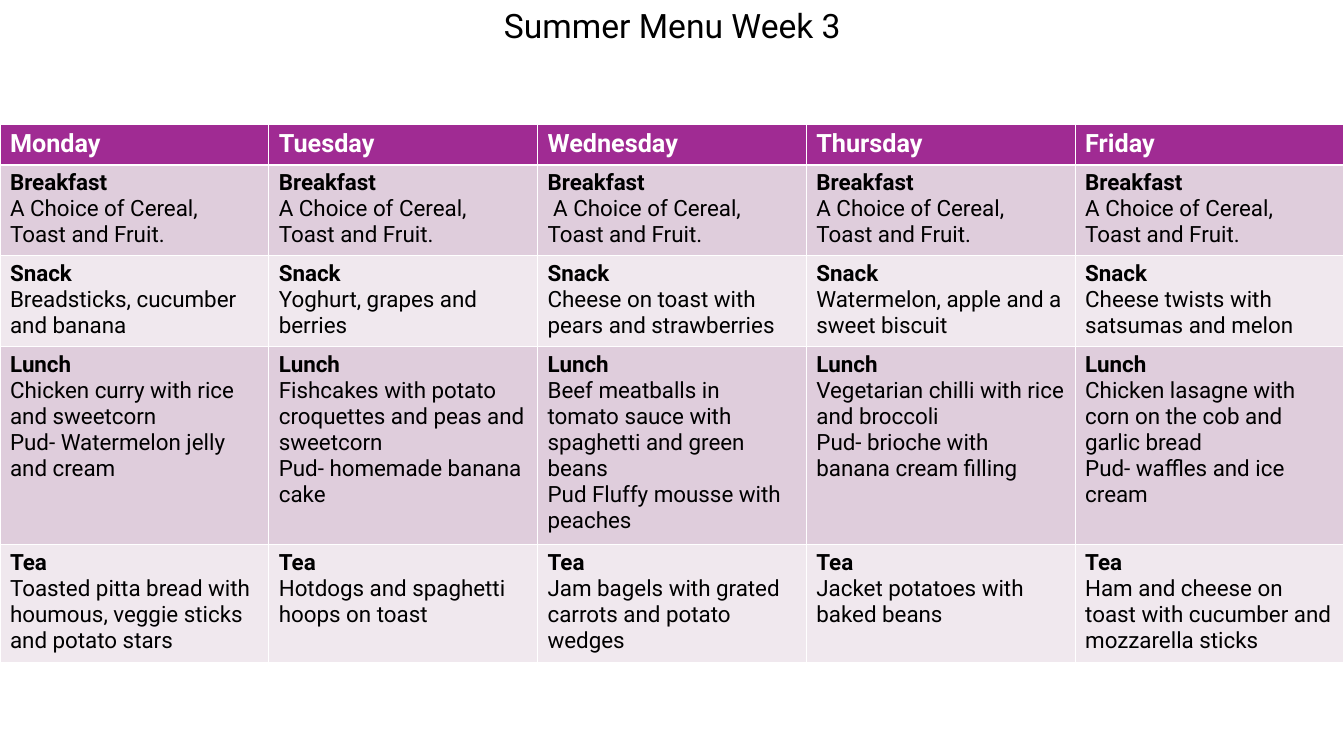
import pptx
import pptx.dml.color
import pptx.enum.text
import pptx.util

Pt = pptx.util.Pt
FONT = "Roboto"
COLOURS = {
    "header": "A02B93",
    "band_dark": "DFCDDC",
    "band_light": "F0E8EE",
    "text": "000000",
    "header_text": "FFFFFF",
}
DAYS = ["Monday", "Tuesday", "Wednesday", "Thursday", "Friday"]
CEREAL = "A Choice of Cereal, Toast and Fruit."

# Each meal: name, row height in points, and the lines for each day
MEALS = [
    ("Breakfast", 62.8, [[CEREAL], [CEREAL], [" " + CEREAL], [CEREAL], [CEREAL]]),
    ("Snack", 62.8, [
        ["Breadsticks, cucumber and banana"],
        ["Yoghurt, grapes and berries"],
        ["Cheese on toast with pears and strawberries"],
        ["Watermelon, apple and a sweet biscuit"],
        ["Cheese twists with satsumas and melon"],
    ]),
    ("Lunch", 137.6, [
        ["Chicken curry with rice and sweetcorn",
         "Pud- Watermelon jelly and cream"],
        ["Fishcakes with potato croquettes and peas and sweetcorn",
         "Pud- homemade banana cake"],
        ["Beef meatballs in tomato sauce with spaghetti and green beans",
         "Pud Fluffy mousse with peaches"],
        ["Vegetarian chilli with rice and broccoli",
         "Pud- brioche with banana cream filling"],
        ["Chicken lasagne with corn on the cob and garlic bread",
         "Pud- waffles and ice cream"],
    ]),
    ("Tea", 81.4, [
        ["Toasted pitta bread with houmous, veggie sticks and potato stars"],
        ["Hotdogs and spaghetti hoops on toast"],
        ["Jam bagels with grated carrots and potato wedges"],
        ["Jacket potatoes with baked beans"],
        ["Ham and cheese on toast with cucumber and mozzarella sticks"],
    ]),
]
HEADER_HEIGHT = 29.2


def colour(name):
    return pptx.dml.color.RGBColor.from_string(COLOURS[name])


def format_paragraph(paragraph, size, colour_name, bold=False):
    font = paragraph.font
    font.name, font.size, font.bold = FONT, Pt(size), bold
    font.color.rgb = colour(colour_name)


def fill_cell(cell, lines, fill, size, colour_name):
    """Write the lines into a cell, the first one in bold."""
    cell.fill.solid()
    cell.fill.fore_color.rgb = colour(fill)
    cell.text = "\n".join(lines)
    for index, paragraph in enumerate(cell.text_frame.paragraphs):
        format_paragraph(paragraph, size, colour_name, bold=index == 0)


def add_title(slide, text, left, top, width, height):
    title = slide.shapes.title
    title.left, title.top = Pt(left), Pt(top)
    title.width, title.height = Pt(width), Pt(height)
    frame = title.text_frame
    frame.text = text
    frame.word_wrap = True
    frame.auto_size = pptx.enum.text.MSO_AUTO_SIZE.SHAPE_TO_FIT_TEXT
    frame.vertical_anchor = pptx.enum.text.MSO_ANCHOR.TOP
    paragraph = frame.paragraphs[0]
    paragraph.alignment = pptx.enum.text.PP_ALIGN.LEFT
    format_paragraph(paragraph, 24, "text")


def add_menu(slide, left, top, width):
    heights = [HEADER_HEIGHT] + [height for _, height, _ in MEALS]
    table = slide.shapes.add_table(
        len(heights), len(DAYS), Pt(left), Pt(top), Pt(width), Pt(sum(heights))
    ).table
    for column in table.columns:
        column.width = Pt(width / len(DAYS))
    for row, height in zip(table.rows, heights):
        row.height = Pt(height)

    # Header row
    for column, day in enumerate(DAYS):
        fill_cell(table.cell(0, column), [day], "header", 18, "header_text")

    # Meal rows in alternating bands
    for row, (meal, _, dishes) in enumerate(MEALS, start=1):
        band = "band_dark" if row % 2 else "band_light"
        for column, lines in enumerate(dishes):
            fill_cell(table.cell(row, column), [meal] + lines, band, 16, "text")


def main():
    presentation = pptx.Presentation()
    presentation.slide_width, presentation.slide_height = Pt(960), Pt(540)
    slide = presentation.slides.add_slide(presentation.slide_layouts[5])
    add_title(slide, "Summer Menu Week 3", 352.8, 0, 269.2, 36)
    add_menu(slide, 0, 88.6, 960)
    presentation.save("out.pptx")


if __name__ == "__main__":
    main()
